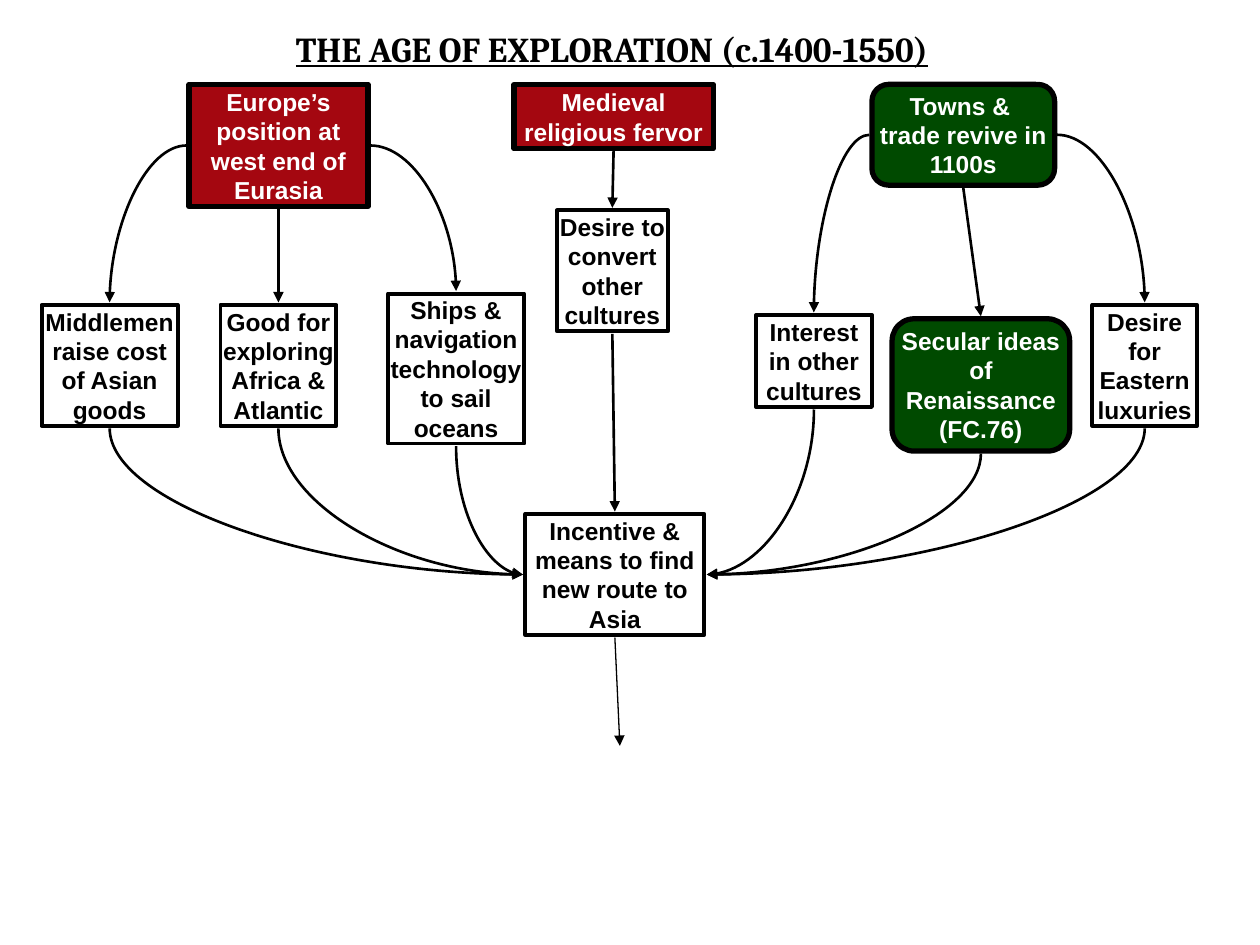
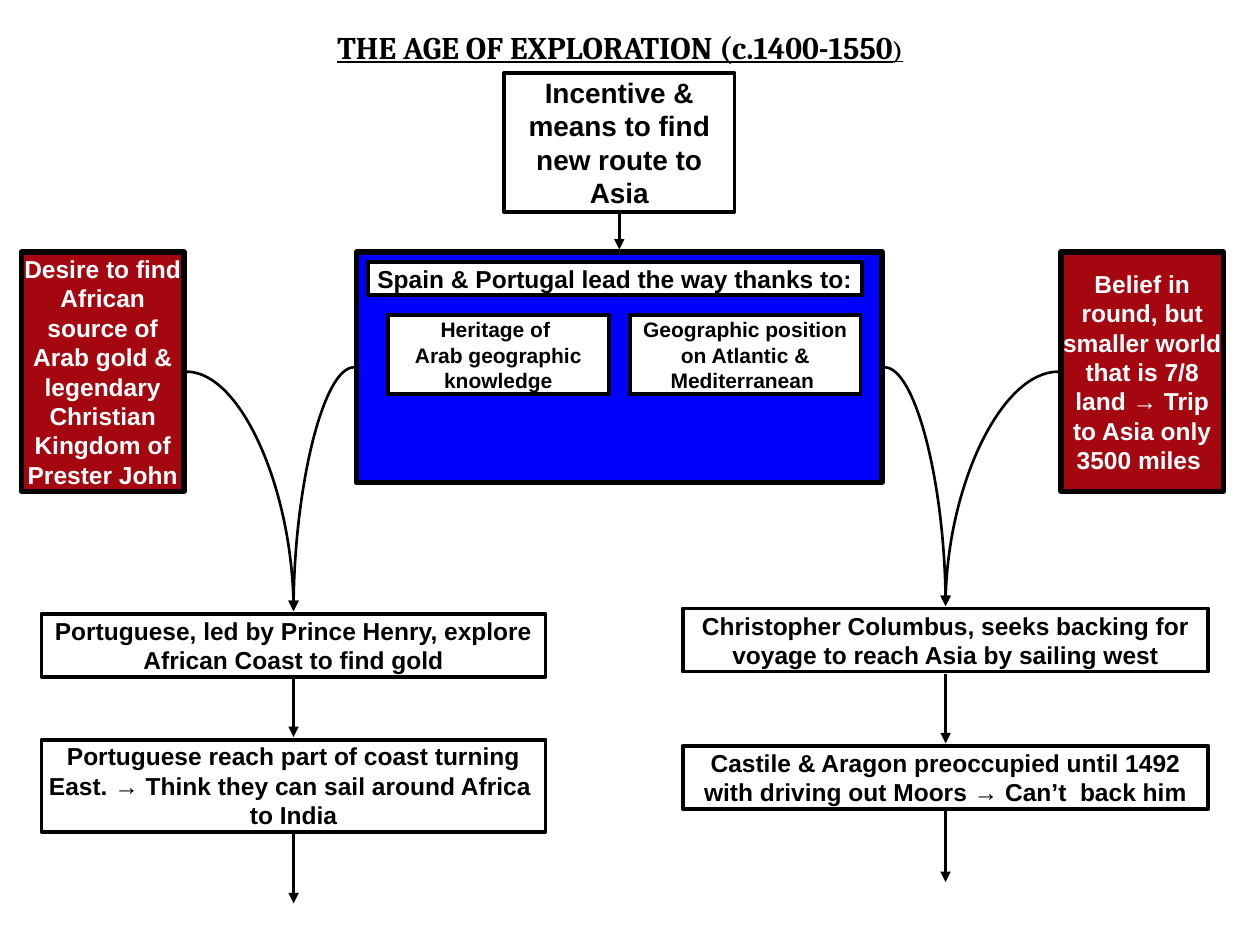
from collections import namedtuple

from lxml import etree
from pptx import Presentation
from pptx.dml.color import RGBColor
from pptx.enum.shapes import MSO_CONNECTOR, MSO_SHAPE
from pptx.enum.text import MSO_ANCHOR, MSO_AUTO_SIZE, PP_ALIGN
from pptx.oxml.ns import qn
from pptx.util import Inches, Pt

PROCESS = MSO_SHAPE.FLOWCHART_PROCESS
ROUNDED = MSO_SHAPE.FLOWCHART_ALTERNATE_PROCESS
STRAIGHT, CURVE = MSO_CONNECTOR.STRAIGHT, MSO_CONNECTOR.CURVE
CENTER, MIDDLE = PP_ALIGN.CENTER, MSO_ANCHOR.MIDDLE
FIT_SHAPE = MSO_AUTO_SIZE.SHAPE_TO_FIT_TEXT

BLACK = RGBColor(0x00, 0x00, 0x00)
WHITE = RGBColor(0xFF, 0xFF, 0xFF)
RED = RGBColor(0xA4, 0x07, 0x10)
GREEN = RGBColor(0x00, 0x4A, 0x00)
BLUE = RGBColor(0x00, 0x00, 0xFF)

TITLE_FONT, BODY_FONT = "Cambria", "Arial"
GAP = Inches(0.02)  # space between an arrow end and its box

BoxStyle = namedtuple("BoxStyle", "shape fill border ink")
PLAIN = BoxStyle(PROCESS, WHITE, 2.25, BLACK)
CAUSE = BoxStyle(PROCESS, RED, 3, WHITE)
TOWN = BoxStyle(ROUNDED, GREEN, 3, WHITE)
PANEL = BoxStyle(PROCESS, BLUE, 3, WHITE)

INCENTIVE = "Incentive & means to find new route to Asia"


def add_span(para, text, font_name, size, color, underline=None):
    span = para.add_run()
    span.text = text
    font = span.font
    font.name, font.size, font.bold = font_name, Pt(size), True
    font.color.rgb, font.underline = color, underline


def add_title(page, left, width, height, spans):
    box = page.shapes.add_textbox(Inches(left), Inches(0.17), Inches(width), Inches(height))
    frame = box.text_frame
    frame.word_wrap, frame.auto_size = False, FIT_SHAPE
    for text, size in spans:
        add_span(frame.paragraphs[0], text, TITLE_FONT, size, BLACK, underline=True)


def add_box(page, style, left, top, width, height, *lines, size=14):
    box = page.shapes.add_shape(
        style.shape, Inches(left), Inches(top), Inches(width), Inches(height))
    box.shadow.inherit = False
    box.fill.solid()
    box.fill.fore_color.rgb = style.fill
    box.line.color.rgb, box.line.width = BLACK, Pt(style.border)
    if lines:
        frame = box.text_frame
        frame.margin_left = frame.margin_right = frame.margin_top = frame.margin_bottom = 0
        frame.word_wrap, frame.auto_size = True, FIT_SHAPE
        frame.vertical_anchor = MIDDLE
        for number, line in enumerate(lines):
            para = frame.add_paragraph() if number else frame.paragraphs[0]
            para.alignment = CENTER
            add_span(para, line, BODY_FONT, size, style.ink)
    return box


# Points just outside the middle of each side of a box
def above(box):
    return box.left + box.width // 2, box.top - GAP


def below(box):
    return box.left + box.width // 2, box.top + box.height + GAP


def left_of(box):
    return box.left - GAP, box.top + box.height // 2


def right_of(box):
    return box.left + box.width + GAP, box.top + box.height // 2


def add_arrow(page, start, end, kind=STRAIGHT, width=1.5):
    arrow = page.shapes.add_connector(kind, *start, *end)
    arrow.line.color.rgb, arrow.line.width = BLACK, Pt(width)
    properties = arrow._element.spPr
    etree.SubElement(properties.find(qn("a:ln")), qn("a:tailEnd"), type="triangle")
    etree.SubElement(properties, qn("a:effectLst"))
    return arrow


def add_side_curve(page, start, end):
    """Quarter curve that leaves sideways and arrives vertically."""
    arrow = add_arrow(page, start, end, CURVE)
    arrow._element.spPr.find(qn("a:prstGeom")).set("prst", "curvedConnector2")
    return arrow


def add_drop_curve(page, start, end):
    """Quarter curve that leaves downwards and arrives sideways."""
    (x1, y1), (x2, y2) = start, end
    middle_x, middle_y = (x1 + x2) // 2, (y1 + y2) // 2
    half_drop, half_run = (y2 - y1) // 2, abs(x2 - x1) // 2
    rightward = x2 > x1
    if rightward:
        half_drop = -half_drop
    arrow = add_side_curve(page, (middle_x - half_drop, middle_y - half_run),
                           (middle_x + half_drop, middle_y + half_run))
    quarter_turns = 3 if rightward else 1
    arrow._element.spPr.find(qn("a:xfrm")).set("rot", str(quarter_turns * 90 * 60000))


def build_causes(page):
    add_title(page, 2.25, 5.7, 0.43, [("THE AGE OF EXPLORATION (c.1400-1550)", 20)])

    # Root causes
    europe = add_box(page, CAUSE, 1.5, 0.67, 1.42, 0.97,
                     "Europe’s position at west end of Eurasia")
    fervor = add_box(page, CAUSE, 4.08, 0.67, 1.58, 0.51, "Medieval religious fervor")
    towns = add_box(page, TOWN, 6.92, 0.67, 1.45, 0.8, "Towns &  trade revive in 1100s")

    # Their effects
    middlemen = add_box(page, PLAIN, 0.33, 2.42, 1.08, 0.96,
                        "Middlemen raise cost of Asian goods")
    exploring = add_box(page, PLAIN, 1.75, 2.42, 0.92, 0.96,
                        "Good for exploring Africa & Atlantic")
    ships = add_box(page, PLAIN, 3.08, 2.33, 1.08, 1.19,
                    "Ships & navigation technology to sail oceans")
    convert = add_box(page, PLAIN, 4.42, 1.67, 0.88, 0.96, "Desire to convert other cultures")
    interest = add_box(page, PLAIN, 6, 2.5, 0.92, 0.73, "Interest in other cultures")
    secular = add_box(page, TOWN, 7.08, 2.53, 1.41, 1.05, "Secular ideas of Renaissance (FC.76)")
    luxuries = add_box(page, PLAIN, 8.67, 2.42, 0.83, 0.96, "Desire for Eastern luxuries")

    # Common outcome
    incentive = add_box(page, PLAIN, 4.17, 4.08, 1.42, 0.96, INCENTIVE)

    for cause, effect in [(europe, exploring), (fervor, convert), (towns, secular),
                          (convert, incentive)]:
        add_arrow(page, below(cause), above(effect))
    for cause, left_effect, right_effect in [(europe, middlemen, ships),
                                             (towns, interest, luxuries)]:
        add_side_curve(page, left_of(cause), above(left_effect))
        add_side_curve(page, right_of(cause), above(right_effect))
    for effect in (middlemen, exploring, ships):
        add_drop_curve(page, below(effect), left_of(incentive))
    for effect in (interest, secular, luxuries):
        add_drop_curve(page, below(effect), right_of(incentive))
    add_arrow(page, below(incentive), (Inches(4.92), Inches(5.92)), width=0.75)


def build_voyages(page):
    add_title(page, 2.58, 5.13, 0.4, [("THE AGE OF EXPLORATION (c.1400-1550", 18), (")", 14)])
    incentive = add_box(page, PLAIN, 4, 0.58, 1.83, 1.1, INCENTIVE, size=16)

    # Iberian advantages
    iberia = add_box(page, PANEL, 2.83, 2, 4.17, 1.83)
    add_box(page, PLAIN, 2.92, 2.08, 3.92, 0.26, "Spain & Portugal lead the way thanks to:")
    add_box(page, PLAIN, 3.08, 2.5, 1.75, 0.63,
            "Heritage of ", "Arab geographic knowledge", size=12)
    add_box(page, PLAIN, 5, 2.5, 1.83, 0.63,
            "Geographic position", "on Atlantic & Mediterranean ", size=12)

    # Motives
    gold = add_box(page, CAUSE, 0.17, 2, 1.29, 1.9,
                   "Desire to find African source of Arab gold & legendary "
                   "Christian Kingdom of Prester John")
    belief = add_box(page, CAUSE, 8.42, 2, 1.29, 1.9,
                     "Belief in round, but smaller world that is 7/8 land → "
                     "Trip to Asia only 3500 miles ")

    # Portuguese and Spanish voyages
    henry = add_box(page, PLAIN, 0.33, 4.87, 4, 0.5,
                    "Portuguese, led by Prince Henry, explore African Coast to find gold")
    coast = add_box(page, PLAIN, 0.33, 5.87, 4, 0.73,
                    "Portuguese reach part of coast turning East. → "
                    "Think they can sail around Africa  to India")
    columbus = add_box(page, PLAIN, 5.42, 4.83, 4.17, 0.5,
                       "Christopher Columbus, seeks backing for voyage to reach Asia "
                       "by sailing west")
    castile = add_box(page, PLAIN, 5.42, 5.92, 4.17, 0.5,
                      "Castile & Aragon preoccupied until 1492 with driving out Moors → "
                      "Can’t  back him")

    add_arrow(page, below(incentive), above(iberia))
    for start, voyage in [(right_of(gold), henry), (left_of(iberia), henry),
                          (right_of(iberia), columbus), (left_of(belief), columbus)]:
        add_side_curve(page, start, above(voyage))
    for first, second, bottom in [(henry, coast, 7.17), (columbus, castile, 7)]:
        add_arrow(page, below(first), above(second))
        x, y = below(second)
        add_arrow(page, (x, y), (x, Inches(bottom)))


def main():
    deck = Presentation()
    deck.slide_width, deck.slide_height = Inches(10), Inches(7.5)
    blank = deck.slide_layouts[6]
    for build in (build_causes, build_voyages):
        build(deck.slides.add_slide(blank))
    deck.save("out.pptx")


if __name__ == "__main__":
    main()
